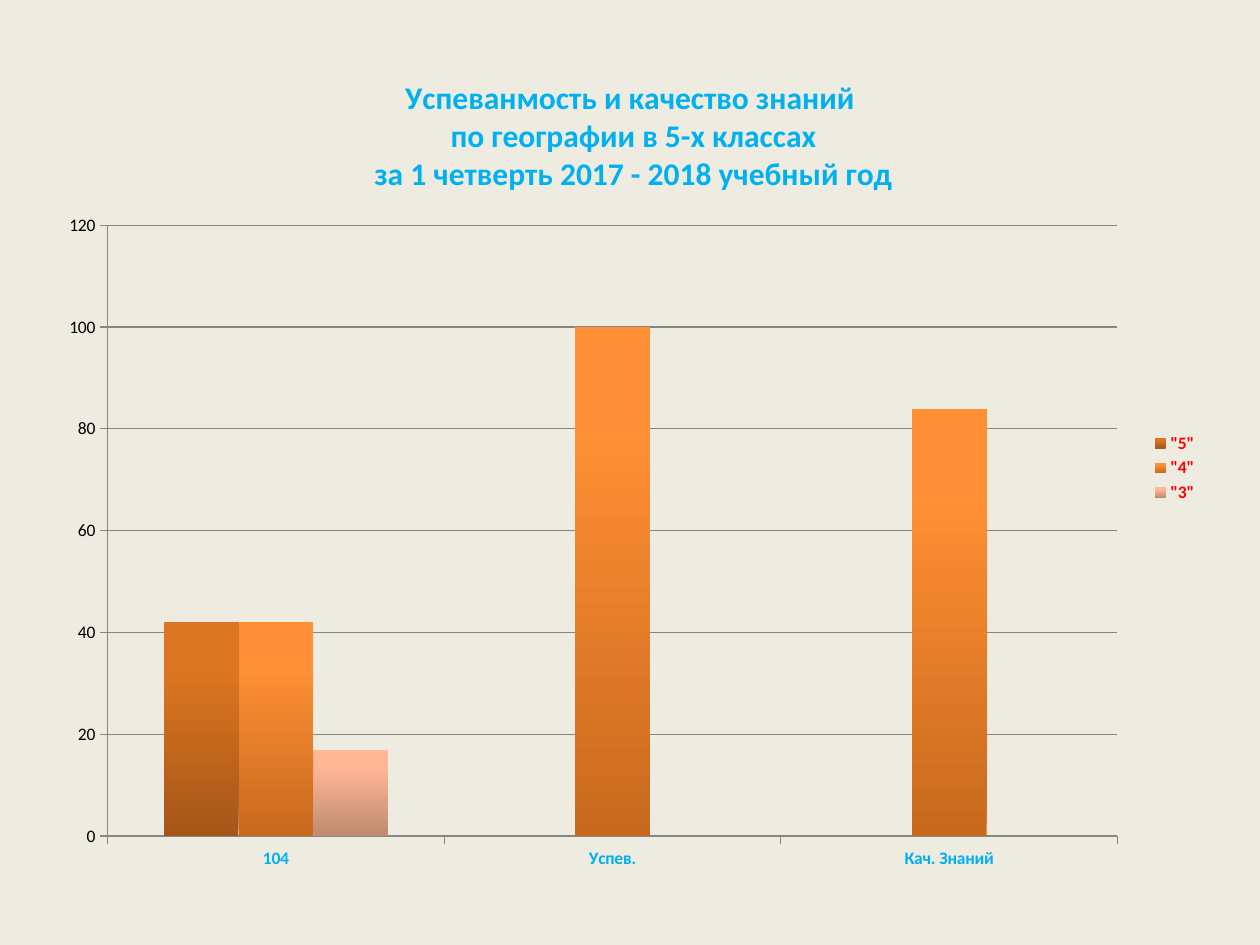
from lxml import etree
from pptx import Presentation
from pptx.chart.data import CategoryChartData
from pptx.dml.color import RGBColor
from pptx.enum.chart import XL_CHART_TYPE as ChartType, XL_LEGEND_POSITION as LegendPos
from pptx.enum.chart import XL_TICK_MARK as Tick
from pptx.oxml.ns import qn
from pptx.util import Cm, Pt

FONT = "Calibri"
SKY, RED, BLACK, GRAY, CREAM = "00B0F0", "FF0000", "000000", "868686", "EEECE1"
TITLE = [
    "Успеванмость и качество знаний",
    " по географии в 5-х классах",
    " за 1 четверть 2017 - 2018 учебный год",
]
CATEGORIES = ["104", "Успев.", "Кач. Знаний"]
SERIES = [
    ('"5"', [42, None, None], "DD7620", "A65618"),
    ('"4"', [42, 100, 84], "FF9035", "C8691D"),
    ('"3"', [17, None, None], "FFB795", "BE8B70"),
]


def rgb(value):
    return RGBColor.from_string(value)


def style_font(font, size=10, color=BLACK, bold=False):
    font.name = FONT
    font.size = Pt(size)
    font.bold = bold
    font.color.rgb = rgb(color)


def add_text(p, text, **style):
    r = p.add_run()
    r.text = text
    style_font(r.font, **style)


def add_title(chart, lines):
    tf = chart.chart_title.text_frame
    for i, line in enumerate(lines):
        p = tf.paragraphs[0] if i == 0 else tf.add_paragraph()
        add_text(p, line, size=18, color=SKY, bold=True)
    chart.chart_title.include_in_layout = False


def style_line(line, color=GRAY, width=0.75):
    line.color.rgb = rgb(color)
    line.width = Pt(width)


def style_axis(axis, **style):
    axis.major_tick_mark = Tick.OUTSIDE
    axis.minor_tick_mark = Tick.NONE
    style_line(axis.format.line)
    style_font(axis.tick_labels.font, **style)


def fill_series(series, top, bottom):
    fill = series.format.fill
    fill.gradient()
    fill.gradient_angle = 90
    for stop, color, position in zip(fill.gradient_stops, (bottom, top), (0, 0.8)):
        stop.color.rgb = rgb(color)
        stop.position = position
    series.invert_if_negative = False


def place_plot(chart, **box):
    plot_area = chart.element.find(".//" + qn("c:plotArea"))
    for old in plot_area.findall(qn("c:layout")):
        plot_area.remove(old)
    layout = etree.Element(qn("c:layout"))
    manual = etree.SubElement(layout, qn("c:manualLayout"))
    settings = {"layoutTarget": "inner", "xMode": "edge", "yMode": "edge", **box}
    for tag, value in settings.items():
        etree.SubElement(manual, qn(f"c:{tag}")).set("val", str(value))
    plot_area.insert(0, layout)


def add_column_chart(s, left, top, width, height):
    data = CategoryChartData()
    data.categories = CATEGORIES
    for name, values, *_ in SERIES:
        data.add_series(name, values)
    frame = s.shapes.add_chart(ChartType.COLUMN_CLUSTERED, left, top, width, height, data)
    chart = frame.chart
    style_font(chart.font)
    add_title(chart, TITLE)

    plot = chart.plots[0]
    plot.gap_width = 150
    plot.vary_by_categories = False
    for series, (*_, light, dark) in zip(plot.series, SERIES):
        fill_series(series, light, dark)

    style_axis(chart.category_axis, color=SKY, bold=True)
    style_axis(chart.value_axis)
    chart.value_axis.minimum_scale = 0
    chart.value_axis.maximum_scale = 120
    chart.value_axis.major_unit = 20
    style_line(chart.value_axis.major_gridlines.format.line)

    chart.has_legend = True
    chart.legend.position = LegendPos.RIGHT
    chart.legend.include_in_layout = False
    style_font(chart.legend.font, color=RED, bold=True)
    place_plot(chart, x=0.05, y=0.21, w=0.87, h=0.73)


def main():
    prs = Presentation()
    prs.slide_width, prs.slide_height = Cm(25.4), Cm(19.05)
    s = prs.slides.add_slide(prs.slide_layouts[6])
    s.background.fill.solid()
    s.background.fill.fore_color.rgb = rgb(CREAM)
    add_column_chart(s, Cm(1), Cm(1), Cm(23.4), Cm(16.87))
    prs.save("out.pptx")


if __name__ == "__main__":
    main()
